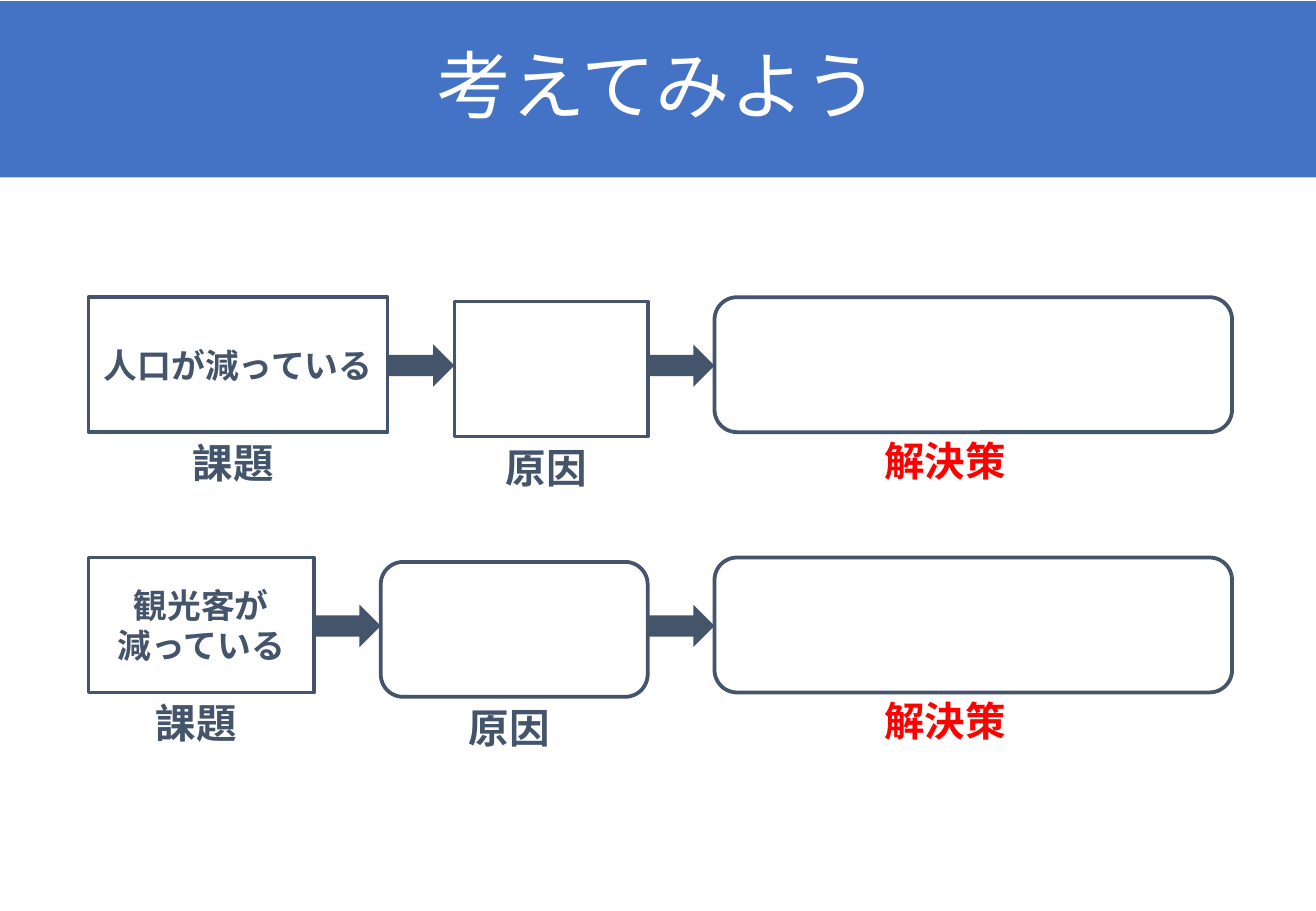
from lxml.etree import SubElement
from pptx import Presentation
from pptx.dml.color import RGBColor
from pptx.enum.shapes import MSO_SHAPE
from pptx.enum.text import MSO_ANCHOR, PP_ALIGN
from pptx.oxml.ns import qn
from pptx.util import Pt

FONT = "Noto Sans CJK JP"
BLUE, SLATE, RED, WHITE = "4472C4", "44546A", "FF0000", "FFFFFF"
RECT, ROUND = MSO_SHAPE.RECTANGLE, MSO_SHAPE.ROUNDED_RECTANGLE


def color(value):
    return RGBColor.from_string(value)


def write(tf, text, size=20, fill=SLATE, bold=True, align=PP_ALIGN.CENTER,
          anchor=MSO_ANCHOR.MIDDLE, spacing=None):
    tf.word_wrap = True
    tf.vertical_anchor = anchor
    for i, line in enumerate(text.split("\n")):
        p = tf.add_paragraph() if i else tf.paragraphs[0]
        p.alignment = align
        p.line_spacing = spacing
        r = p.add_run()
        r.text = line
        r.font.name = FONT
        r.font.size = Pt(size)
        r.font.bold = bold
        r.font.color.rgb = color(fill)
        SubElement(r.font._element, qn("a:ea")).set("typeface", FONT)


class Flow:
    """Style and current slide of the issue-cause-solution diagram."""
    box_h, arrow_h, line_w = 80, 25.2, 2.25
    label_w, label_h = 68, 36

    def __init__(self, s):
        self.s = s

    def shape(self, kind, x, y, w, h, fill=None, line=None):
        sp = self.s.shapes.add_shape(kind, Pt(x), Pt(y), Pt(w), Pt(h))
        sp.shadow.inherit = False
        if fill:
            sp.fill.solid()
            sp.fill.fore_color.rgb = color(fill)
        else:
            sp.fill.background()
        if line:
            sp.line.color.rgb = color(line)
            sp.line.width = Pt(self.line_w)
        else:
            sp.line.fill.background()
        return sp

    def title(self, text, w):
        sp = self.shape(RECT, 0, 0.7, w, 104.4, fill=BLUE)
        write(sp.text_frame, text, size=44, fill=WHITE, bold=False, spacing=0.9)

    def box(self, kind, x, y, w, text=""):
        sp = self.shape(kind, x, y, w, self.box_h, line=SLATE)
        if text:
            write(sp.text_frame, text)

    def arrow(self, x1, x2, y):
        self.shape(MSO_SHAPE.RIGHT_ARROW, x1, y - self.arrow_h / 2,
                   x2 - x1, self.arrow_h, fill=SLATE)

    def label(self, text, x, y, w=label_w, fill=SLATE):
        sp = self.s.shapes.add_textbox(Pt(x), Pt(y), Pt(w), Pt(self.label_h))
        write(sp.text_frame, text, size=24, fill=fill,
              align=PP_ALIGN.LEFT, anchor=MSO_ANCHOR.TOP)

    def row(self, y, issue, issue_w, cause_kind):
        issue_x, cause_end, solution_x, solution_w = 52.5, 383.8, 423.4, 306.7
        issue_end = issue_x + issue_w
        gap = solution_x - cause_end
        cause_x, cause_y = issue_end + gap, y + 2.6
        cause_w = cause_end - cause_x
        # Boxes
        self.box(RECT, issue_x, y, issue_w, issue)
        self.box(cause_kind, cause_x, cause_y, cause_w)
        self.box(ROUND, solution_x, y, solution_w)
        # Arrows
        for x in (issue_end, cause_end):
            self.arrow(x, x + gap, y + self.box_h / 2 + 0.5)
        # Labels under the boxes
        for text, x, w, top in (("課題", issue_x, issue_w, y),
                                ("原因", cause_x, cause_w, cause_y)):
            self.label(text, x + (w - self.label_w) / 2, top + self.box_h)
        self.label("解決策", 517, y + self.box_h - 1.2, w=124.6, fill=RED)


def main():
    prs = Presentation()
    prs.slide_width, prs.slide_height = Pt(779.8), Pt(540)
    flow = Flow(prs.slides.add_slide(prs.slide_layouts[6]))

    # Title band
    flow.title("考えてみよう", 779.8)

    # One chain per issue
    flow.row(176.2, "人口が減っている", 177.2, RECT)
    flow.row(330.5, "観光客が\n減っている", 133.5, ROUND)

    prs.save("out.pptx")


if __name__ == "__main__":
    main()
